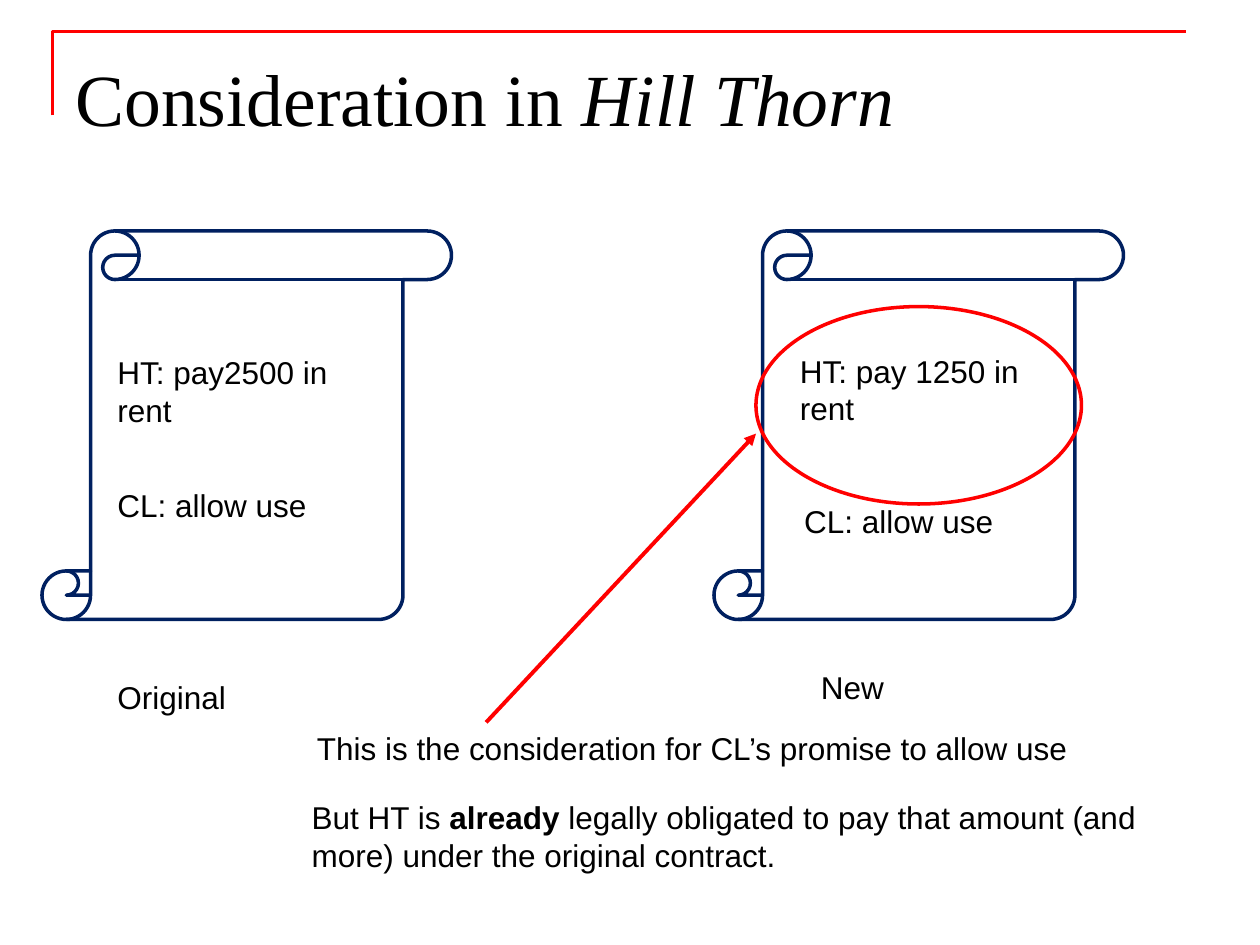
from typing import NamedTuple

from lxml.etree import SubElement
from pptx import Presentation
from pptx.dml.color import RGBColor
from pptx.enum.shapes import MSO_CONNECTOR as Conn, MSO_SHAPE as Shape
from pptx.enum.text import MSO_ANCHOR as Anchor
from pptx.oxml.ns import qn
from pptx.util import Inches, Pt

BLACK = RGBColor(0x00, 0x00, 0x00)
RED = RGBColor(0xFF, 0x00, 0x00)
NAVY = RGBColor(0x00, 0x20, 0x60)

# Grid of 120 columns by 90 rows
WIDTH, HEIGHT = Inches(10), Inches(7.5)
COL, ROW = WIDTH / 120, HEIGHT / 90
ONE_LINE, TWO_LINES = 4.8, 8.5


class Box(NamedTuple):
    col: float
    row: float
    cols: float
    rows: float

    def emu(self) -> tuple[int, ...]:
        return (round(self.col * COL), round(self.row * ROW),
                round(self.cols * COL), round(self.rows * ROW))


class Run(NamedTuple):
    text: str
    bold: bool = False
    italic: bool = False


class Label(NamedTuple):
    box: Box
    runs: list[Run]


SCROLLS = [Box(col, 22, 39, 37) for col in (4, 68)]
PROMISE = Box(72, 29.2, 31, 18.8)

LABELS = [
    # Original contract
    Label(Box(10, 33, 27, TWO_LINES), [Run("HT: pay2500 in rent")]),
    Label(Box(10, 45.7, 21, ONE_LINE), [Run("CL: allow use")]),
    Label(Box(10, 64, 30, ONE_LINE), [Run("Original")]),
    # New contract
    Label(Box(75, 32.9, 26, TWO_LINES), [Run("HT: pay 1250 in rent")]),
    Label(Box(75.4, 47.2, 21, ONE_LINE), [Run("CL: allow use")]),
    Label(Box(77, 63, 30, ONE_LINE), [Run("New")]),
    # Comments
    Label(Box(29, 68.8, 86, ONE_LINE),
          [Run("This is the consideration for CL’s promise to allow use")]),
    Label(Box(28.5, 75.4, 86, TWO_LINES),
          [Run("But HT is "), Run("already", bold=True),
           Run(" legally obligated to pay that amount (and more) "
               "under the original contract.")]),
]


def add_text(s, box: Box, runs: list[Run], *, font: str = "Arial",
             size: float = 18, color: RGBColor = BLACK, top: float = 0.05) -> None:
    tf = s.shapes.add_textbox(*box.emu()).text_frame
    tf.word_wrap = True
    tf.vertical_anchor = Anchor.TOP
    tf.margin_top = Inches(top)
    p = tf.paragraphs[0]
    for run in runs:
        r = p.add_run()
        r.text = run.text
        r.font.name, r.font.size = font, Pt(size)
        r.font.bold, r.font.italic = run.bold, run.italic
        r.font.color.rgb = color


def set_outline(sp, color: RGBColor, width: float) -> None:
    sp.fill.background()
    sp.line.color.rgb = color
    sp.line.width = Pt(width)
    sp.shadow.inherit = False


def add_outline(s, kind: Shape, box: Box, color: RGBColor) -> None:
    set_outline(s.shapes.add_shape(kind, *box.emu()), color, 2)


def add_corner_rule(s) -> None:
    left, top, right, bottom = 5, 3, 113, 11
    builder = s.shapes.build_freeform(left, bottom, scale=COL)
    builder.add_line_segments([(left, top), (right, top)], close=False)
    set_outline(builder.convert_to_shape(), RED, 1.5)


def add_arrow(s, start: tuple[float, float], end: tuple[float, float]) -> None:
    (x1, y1), (x2, y2) = start, end
    line = s.shapes.add_connector(Conn.STRAIGHT, round(x1 * COL), round(y1 * ROW),
                                  round(x2 * COL), round(y2 * ROW))
    line.line.color.rgb = RED
    line.line.width = Pt(2.25)
    SubElement(line.line._get_or_add_ln(), qn("a:tailEnd"), type="triangle")
    SubElement(line._element.spPr, qn("a:effectLst"))


def main() -> None:
    prs = Presentation()
    prs.slide_width, prs.slide_height = WIDTH, HEIGHT
    s = prs.slides.add_slide(prs.slide_layouts[6])

    # Title with its corner rule
    add_corner_rule(s)
    add_text(s, Box(6, 3.6, 108, 15),
             [Run("Consideration in "), Run("Hill Thorn", italic=True)],
             font="Times New Roman", size=42, top=0.12)

    # The two contracts, with the new promise circled
    for box in SCROLLS:
        add_outline(s, Shape.VERTICAL_SCROLL, box, NAVY)
    add_outline(s, Shape.OVAL, PROMISE, RED)
    add_arrow(s, (46.3, 68.8), (PROMISE.col, 41.3))

    # Wording
    for label in LABELS:
        add_text(s, label.box, label.runs)

    prs.save("out.pptx")


if __name__ == "__main__":
    main()
